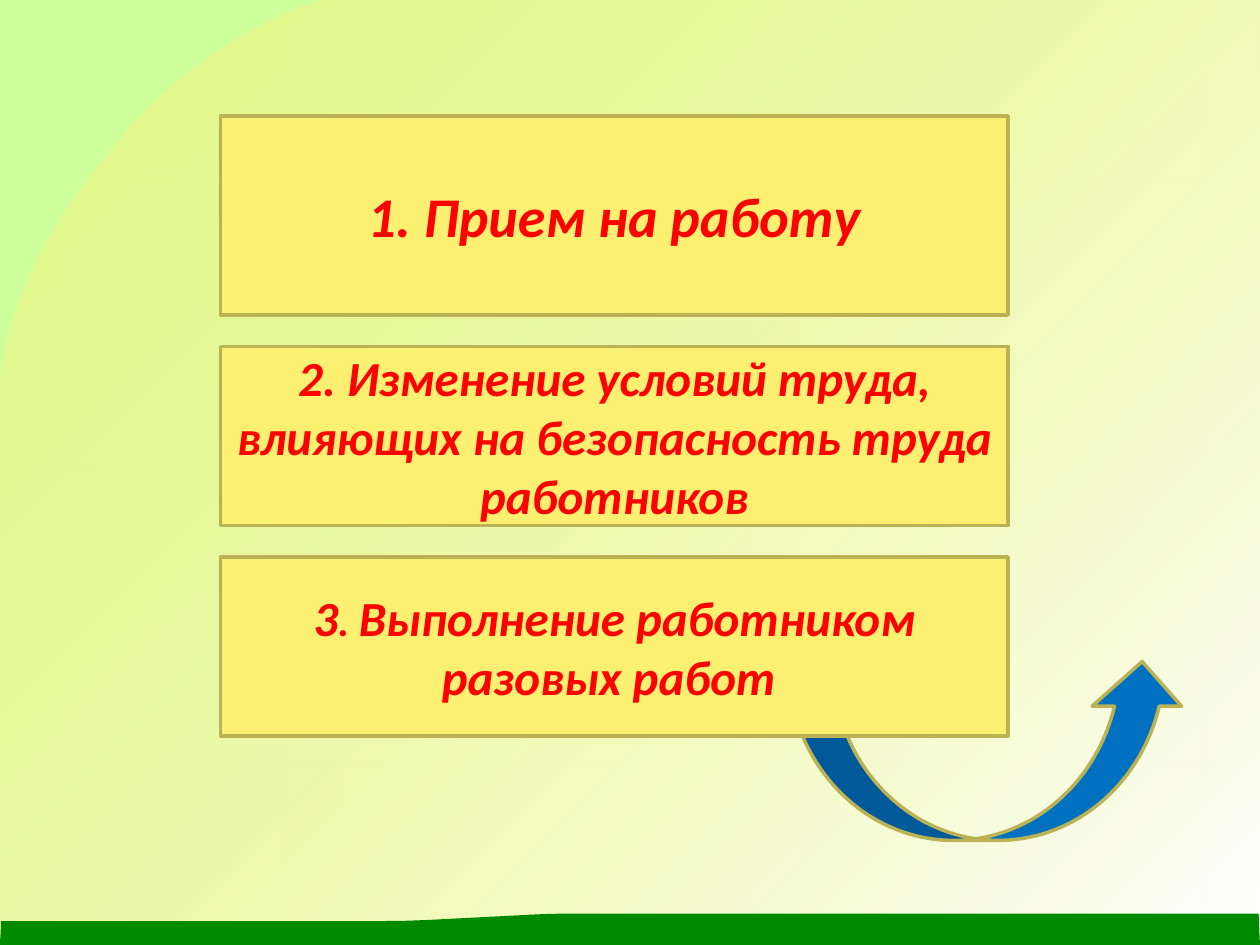
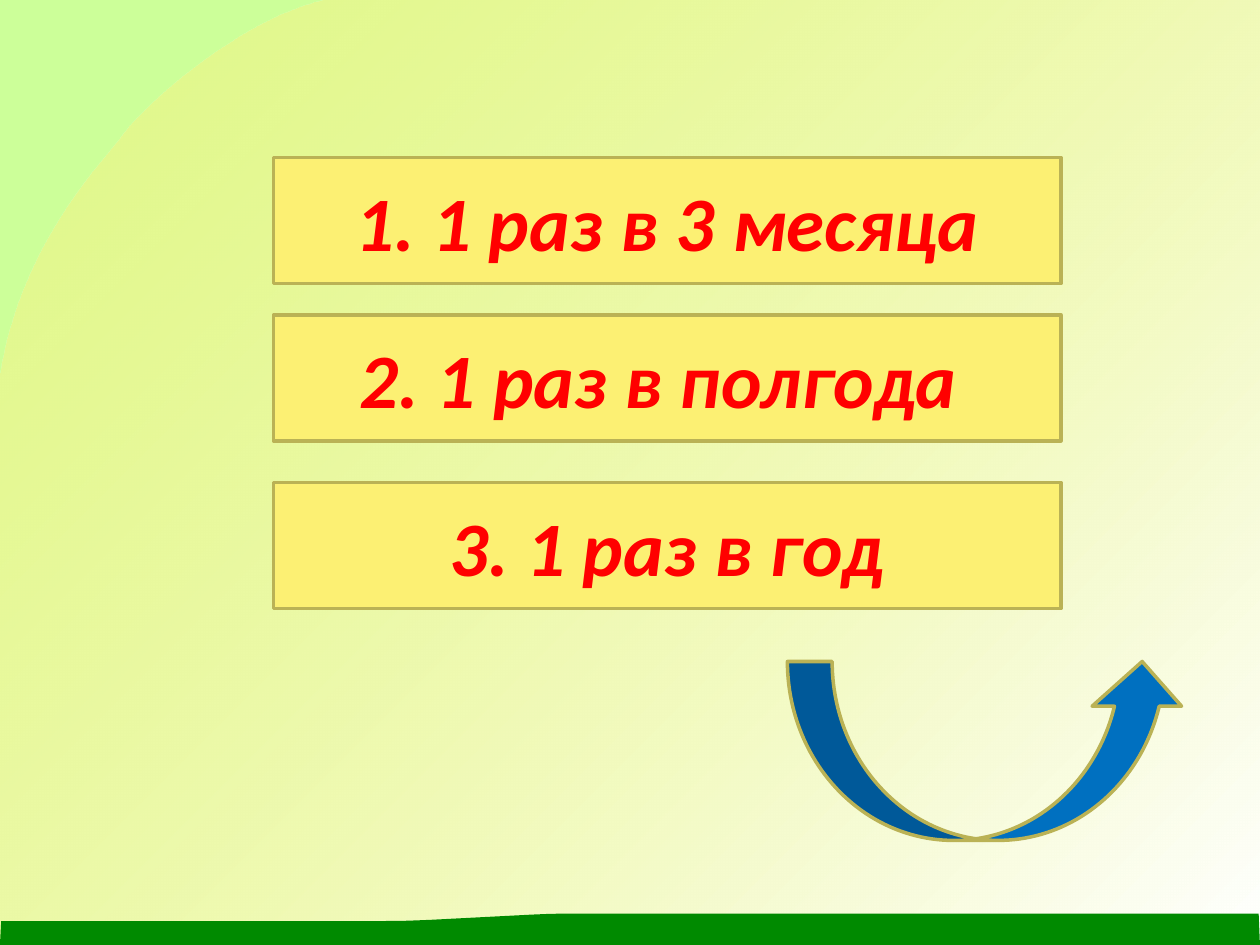
import dataclasses
import typing

import lxml.etree
import pptx
import pptx.dml.color
import pptx.enum.shapes
import pptx.enum.text
import pptx.oxml.ns
import pptx.util

Inches = pptx.util.Inches
Pt = pptx.util.Pt
Kind = pptx.enum.shapes.MSO_SHAPE
Point = tuple[float, float]

GREEN, GRASS, YELLOW = "CCFF99", "008A00", "FCF073"
WHITE, BLUE, OLIVE, RED = "FFFFFF", "0070C0", "BAB255", "FF0000"
WIDE, HIGH = 10, 7.5
STEPS = 24
FONT = {"name": "Calibri", "bold": True, "italic": True}
FRAME = {"word_wrap": True, "vertical_anchor": pptx.enum.text.MSO_ANCHOR.MIDDLE}


@dataclasses.dataclass(frozen=True)
class Run:
    text: str
    size: int


@dataclasses.dataclass(frozen=True)
class Box:
    left: float
    top: float
    width: float
    height: float
    runs: tuple[Run, ...] = ()


ARROW = Box(6.25, 5.25, 3.17, 1.42)
SLIDES = (
    (
        Box(1.75, 0.92, 6.25, 1.58, (Run("1. Прием на работу", 32),)),
        Box(1.75, 2.75, 6.25, 1.42, (
            Run("2. Изменение условий труда, влияющих на безопасность труда работников", 28),)),
        Box(1.75, 4.42, 6.25, 1.42, (
            Run("3", 28), Run(". ", 24), Run("Выполнение работником разовых работ ", 28))),
    ),
    tuple(
        Box(2.17, top, 6.25, 1, (Run(text, 44),))
        for top, text in (
            (1.25, "1. 1 раз в 3 месяца"),
            (2.5, "2. 1 раз в полгода "),
            (3.83, "3. 1 раз в год"),
        )
    ),
)


def color(code: str) -> pptx.dml.color.RGBColor:
    return pptx.dml.color.RGBColor.from_string(code)


def paint(fill: typing.Any, code: str) -> None:
    fill.solid()
    fill.fore_color.rgb = color(code)


def apply(target: typing.Any, values: dict[str, typing.Any]) -> None:
    for name, value in values.items():
        setattr(target, name, value)


def curve(*knots: Point) -> list[Point]:
    """Sample a chain of cubic Bezier curves that share their end knots."""
    points = [knots[0]]
    for first in range(0, len(knots) - 1, 3):
        part = knots[first:first + 4]
        for step in range(1, STEPS + 1):
            t = step / STEPS
            weights = ((1 - t) ** 3, 3 * t * (1 - t) ** 2, 3 * t * t * (1 - t), t ** 3)
            points.append((sum(w * x for w, (x, _) in zip(weights, part)),
                           sum(w * y for w, (_, y) in zip(weights, part))))
    return points


def outline(slide: typing.Any, points: list[Point]) -> typing.Any:
    first, *rest = [(Inches(x), Inches(y)) for x, y in points]
    pen = slide.shapes.build_freeform(*first, scale=1.0)
    pen.add_line_segments(rest, close=True)
    shape = pen.convert_to_shape()
    shape.shadow.inherit = False
    shape.line.fill.background()
    return shape


def scene(slide: typing.Any) -> None:
    """Draw the background, the glowing field and the grass band."""
    paint(slide.background.fill, GREEN)
    field = outline(slide, [
        *curve((2.58, 0), (1.9, 0.16), (1.16, 0.83), (0.98, 1.07),
               (0.8, 1.32), (0.16, 1.94), (0, 3.01)),
        (0, HIGH), (WIDE, HIGH), (WIDE, 0)])
    field.fill.gradient()
    field.fill.gradient_angle = 315
    for stop, code in zip(field.fill.gradient_stops, (YELLOW, WHITE)):
        stop.color.rgb = color(code)
    tint = next(field.element.iter(pptx.oxml.ns.qn("a:srgbClr")))
    lxml.etree.SubElement(tint, pptx.oxml.ns.qn("a:alpha"), val="39000")

    grass = outline(slide, [
        (9.99, 7.25),
        *curve((4.73, 7.25), (4.48, 7.25), (4.41, 7.25), (4.2, 7.26)),
        *curve((3.42, 7.3), (3.2, 7.31), (3.16, 7.31), (2.86, 7.31)),
        (0.01, 7.31), (0, HIGH), (WIDE, HIGH)])
    paint(grass.fill, GRASS)


def draw(slide: typing.Any, kind: Kind, box: Box, code: str) -> None:
    shape = slide.shapes.add_shape(
        kind, Inches(box.left), Inches(box.top), Inches(box.width), Inches(box.height))
    shape.shadow.inherit = False
    paint(shape.fill, code)
    paint(shape.line.fill, OLIVE)
    shape.line.width = Pt(2)
    if not box.runs:
        return
    apply(shape.text_frame, FRAME)
    para = shape.text_frame.paragraphs[0]
    para.alignment = pptx.enum.text.PP_ALIGN.CENTER
    for item in box.runs:
        run = para.add_run()
        run.text = item.text
        apply(run.font, FONT | {"size": Pt(item.size)})
        run.font.color.rgb = color(RED)


def main() -> None:
    deck = pptx.Presentation()
    apply(deck, {"slide_width": Inches(WIDE), "slide_height": Inches(HIGH)})
    for boxes in SLIDES:
        slide = deck.slides.add_slide(deck.slide_layouts[6])
        scene(slide)
        draw(slide, Kind.CURVED_UP_ARROW, ARROW, BLUE)
        for box in boxes:
            draw(slide, Kind.RECTANGLE, box, YELLOW)
    deck.save("out.pptx")


if __name__ == "__main__":
    main()
